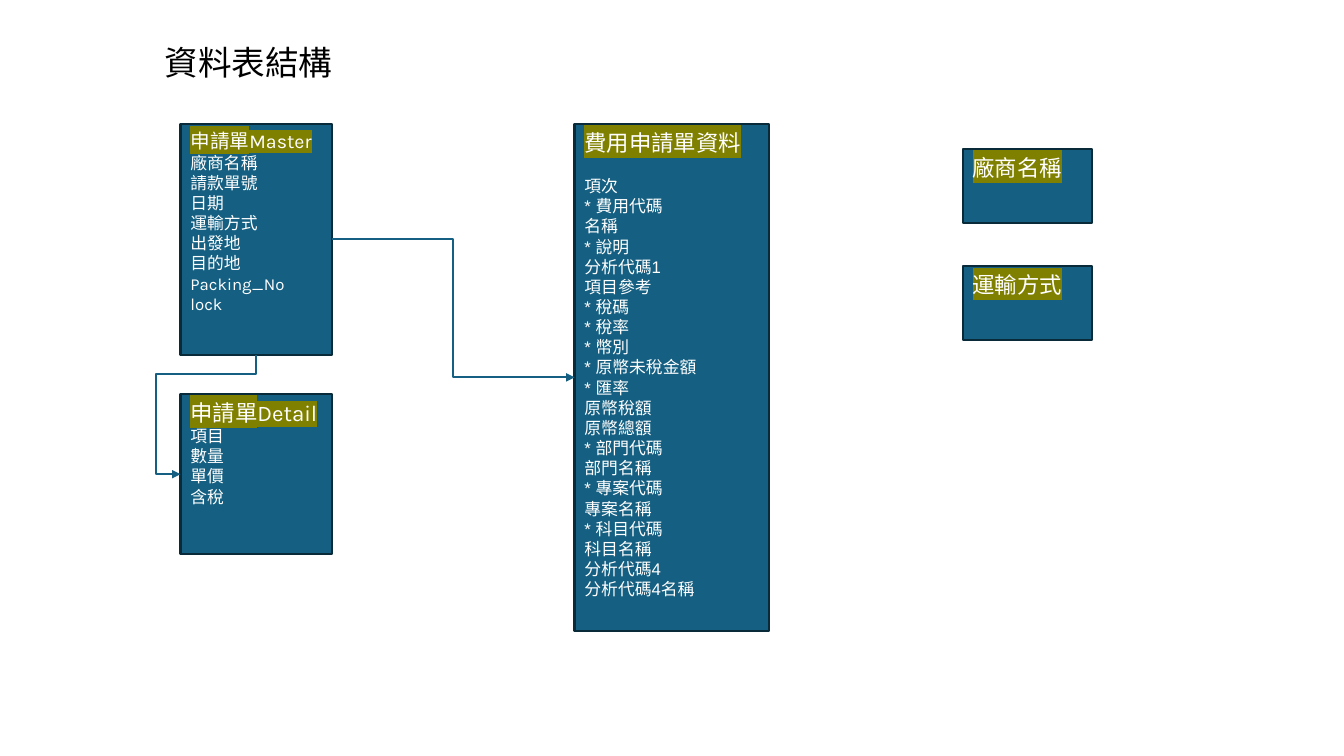
from lxml.etree import SubElement
from pptx import Presentation
from pptx.dml.color import RGBColor
from pptx.enum.shapes import MSO_CONNECTOR, MSO_SHAPE
from pptx.enum.text import MSO_ANCHOR, PP_ALIGN
from pptx.oxml.ns import qn
from pptx.util import Cm, Pt

BLUE = RGBColor(0x15, 0x60, 0x82)
NAVY = RGBColor(0x09, 0x2A, 0x39)
OLIVE = RGBColor(0x80, 0x80, 0x00)
WHITE = RGBColor(0xFF, 0xFF, 0xFF)
BLACK = RGBColor(0x00, 0x00, 0x00)

FRAME = {"word_wrap": True, "vertical_anchor": MSO_ANCHOR.TOP}
HEAD = {"size": Pt(16), "name": "Karla"}
FIELD = {"size": Pt(12), "name": "Karla"}

MASTER = ["廠商名稱", "請款單號", "日期", "運輸方式", "出發地", "目的地",
          "Packing_No", "lock"]
DETAIL = ["項目", "數量", "單價", "含稅"]
COST = ["項次", "* 費用代碼", "名稱", "* 說明", "分析代碼1", "項目參考",
        "* 稅碼", "* 稅率", "* 幣別", "* 原幣未稅金額", "* 匯率",
        "原幣稅額", "原幣總額", "* 部門代碼", "部門名稱", "* 專案代碼",
        "專案名稱", "* 科目代碼", "科目名稱", "分析代碼4", "分析代碼4名稱"]


def put(item, form):
    """Set each attribute named in form on item."""
    for key, value in form.items():
        setattr(item, key, value)


def add_run(para, text, form, color, mark=None):
    """Add a run to para, with mark as its highlight colour."""
    run = para.add_run()
    run.text = text
    run.font.color.rgb = color
    if mark is not None:
        light = SubElement(run.font._element, qn("a:highlight"))
        SubElement(light, qn("a:srgbClr")).set("val", str(mark))
    put(run.font, form)


def add_title(slide, text):
    title = slide.shapes.title
    put(title, {"left": Cm(3.89), "top": Cm(0.94),
                "width": Cm(4.78), "height": Cm(1.27)})
    put(title.text_frame, {**FRAME, "word_wrap": False})
    para = title.text_frame.paragraphs[0]
    para.alignment = PP_ALIGN.LEFT
    add_run(para, text, {"size": Pt(24), "name": "Karla"}, BLACK)


def add_box(slide, place, head, fields=(), size=16, font="Karla", gap=0):
    """Draw one data table: a marked head, then its fields after a gap."""
    box = slide.shapes.add_shape(MSO_SHAPE.FLOWCHART_PROCESS,
                                 *(Cm(n) for n in place))
    box.shadow.inherit = False
    box.fill.solid()
    box.fill.fore_color.rgb = BLUE
    box.line.color.rgb = NAVY
    box.line.width = Pt(1.5)
    frame = box.text_frame
    put(frame, FRAME)
    add_run(frame.paragraphs[0], head, {**HEAD, "size": Pt(size)}, WHITE, OLIVE)
    for field in fields:
        add_run(frame.add_paragraph(), field, {**FIELD, "name": font}, WHITE)
    for para in frame.paragraphs:
        para.alignment = PP_ALIGN.LEFT
    if fields:
        frame.paragraphs[1].space_before = Pt(gap)
    return box


def add_link(slide, start, end):
    """Join two boxes, each given with its site, by an elbow arrow."""
    link = slide.shapes.add_connector(MSO_CONNECTOR.ELBOW, 0, 0, 0, 0)
    link.begin_connect(*start)
    link.end_connect(*end)
    link.line.color.rgb = BLUE
    link.line.width = Pt(1.5)
    SubElement(link.line._get_or_add_ln(), qn("a:tailEnd")).set("type", "triangle")
    SubElement(link._element.spPr, qn("a:effectLst"))
    return link


def turn_link(link, bends):
    """Leave downwards: turn the link by 90 degrees and place its bends."""
    wide, high = link.width, link.height
    put(link, {"left": link.left + (wide - high) // 2,
               "top": link.top + (high - wide) // 2,
               "width": high, "height": wide})
    form = link._element.spPr.find(qn("a:xfrm"))
    put(form, {"rot": 90, "flipH": False})
    geom = link._element.spPr.find(qn("a:prstGeom"))
    geom.set("prst", "bentConnector4")
    guides = geom.find(qn("a:avLst"))
    for num, bend in enumerate(bends, 1):
        guide = SubElement(guides, qn("a:gd"))
        guide.set("name", f"adj{num}")
        guide.set("fmla", f"val {round(bend * 100000)}")


def main():
    deck = Presentation()
    put(deck, {"slide_width": Cm(33.87), "slide_height": Cm(19.05)})
    slide = deck.slides.add_slide(deck.slide_layouts[5])
    add_title(slide, "資料表結構")

    master = add_box(slide, (4.55, 3.12, 3.81, 5.82), "申請單Master", MASTER, 14)
    detail = add_box(slide, (4.55, 9.93, 3.81, 4.04), "申請單Detail", DETAIL)
    cost = add_box(slide, (14.48, 3.12, 4.9, 12.78), "費用申請單資料", COST,
                   font="Arial", gap=14.4)
    for row, name in enumerate(["廠商名稱", "運輸方式"]):
        add_box(slide, (24.26, 3.76 + 2.95 * row, 3.25, 1.85), name)

    turn_link(add_link(slide, (master, 2), (detail, 1)), (0.16, 1.33))
    add_link(slide, (master, 3), (cost, 1))
    deck.save("out.pptx")


if __name__ == "__main__":
    main()
